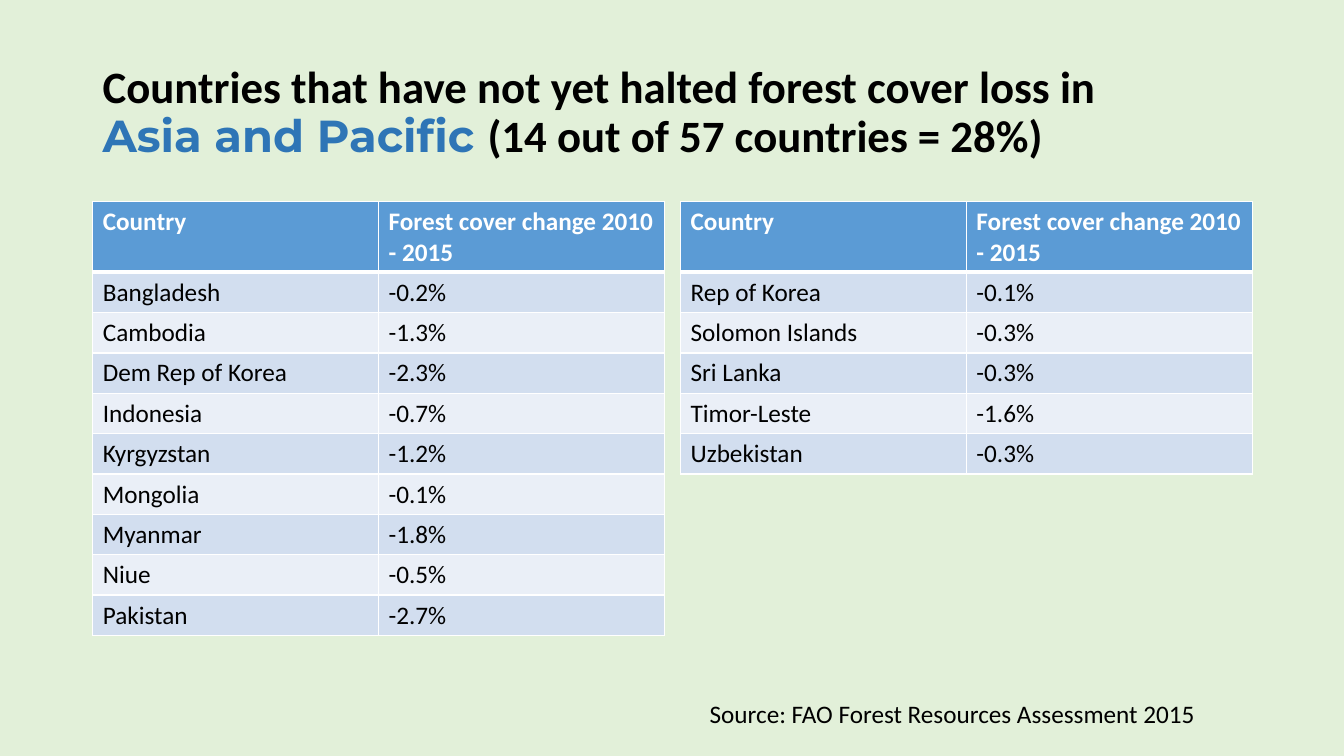
from lxml import etree
from pptx import Presentation
from pptx.dml.color import RGBColor
from pptx.enum.text import MSO_ANCHOR
from pptx.oxml.ns import qn
from pptx.util import Inches, Pt

MIDDLE = MSO_ANCHOR.MIDDLE

BACKGROUND = RGBColor(0xE2, 0xF0, 0xD9)
BLACK = RGBColor(0, 0, 0)
WHITE = RGBColor(0xFF, 0xFF, 0xFF)
REGION_BLUE = RGBColor(0x2E, 0x75, 0xB6)
HEADER_BLUE = RGBColor(0x5B, 0x9B, 0xD5)
BANDS = (RGBColor(0xD2, 0xDE, 0xEF), RGBColor(0xEA, 0xEF, 0xF7))

BODY_FONT = "Calibri"
REGION_FONT = "Montserrat"

MARGIN = 0.92
TABLE_TOP = 2
TABLE_WIDTH = 5.67
TABLE_GAP = 0.16
HEADER_HEIGHT = 0.7
ROW_HEIGHT = 0.4

HEADER = ("Country", "Forest cover change 2010 - 2015")
LEFT_COUNTRIES = [
    ("Bangladesh", "-0.2%"),
    ("Cambodia", "-1.3%"),
    ("Dem Rep of Korea", "-2.3%"),
    ("Indonesia", "-0.7%"),
    ("Kyrgyzstan", "-1.2%"),
    ("Mongolia", "-0.1%"),
    ("Myanmar", "-1.8%"),
    ("Niue", "-0.5%"),
    ("Pakistan", "-2.7%"),
]
RIGHT_COUNTRIES = [
    ("Rep of Korea", "-0.1%"),
    ("Solomon Islands", "-0.3%"),
    ("Sri Lanka", "-0.3%"),
    ("Timor-Leste", "-1.6%"),
    ("Uzbekistan", "-0.3%"),
]


def format_run(r, size, color, bold=False, font=BODY_FONT):
    r.font.size = Pt(size)
    r.font.name = font
    r.font.bold = bold
    r.font.color.rgb = color


def add_text_frame(slide, x, y, w, h):
    box = slide.shapes.add_textbox(Inches(x), Inches(y), Inches(w), Inches(h))
    tf = box.text_frame
    tf.word_wrap = True
    return tf


def add_title(slide, x, y, w, h):
    tf = add_text_frame(slide, x, y, w, h)
    tf.vertical_anchor = MIDDLE
    p = tf.paragraphs[0]
    p.line_spacing = 0.9
    r = p.add_run()
    r.text = "Countries that have not yet halted forest cover loss in"
    format_run(r, 32, BLACK, True)
    p.add_line_break()
    r = p.add_run()
    r.text = "Asia and Pacific "
    format_run(r, 32, REGION_BLUE, True, REGION_FONT)
    r = p.add_run()
    r.text = "(14 out of 57 countries = 28%)"
    format_run(r, 32, BLACK, True)


def add_borders(cell, top, bottom):
    """Draw white cell borders; top and bottom are widths in points."""
    tc_pr = cell._tc.get_or_add_tcPr()
    for side, width in (("L", 1), ("R", 1), ("T", top), ("B", bottom)):
        ln = etree.SubElement(tc_pr, qn(f"a:ln{side}"), w=str(Pt(width)))
        fill = etree.SubElement(ln, qn("a:solidFill"))
        etree.SubElement(fill, qn("a:srgbClr"), val=str(WHITE))


def add_country_table(slide, x, y, w, countries):
    rows = [HEADER] + countries
    h = HEADER_HEIGHT + ROW_HEIGHT * len(countries)
    table = slide.shapes.add_table(len(rows), len(HEADER), Inches(x), Inches(y),
                                   Inches(w), Inches(h)).table
    for i, values in enumerate(rows):
        is_header = i == 0
        table.rows[i].height = Inches(HEADER_HEIGHT if is_header else ROW_HEIGHT)
        for j, value in enumerate(values):
            cell = table.cell(i, j)
            cell.text_frame.text = value
            format_run(cell.text_frame.paragraphs[0].runs[0], 18,
                       WHITE if is_header else BLACK, is_header)
            add_borders(cell, 3 if i == 1 else 1, 3 if is_header else 1)
            cell.fill.solid()
            cell.fill.fore_color.rgb = HEADER_BLUE if is_header else BANDS[(i - 1) % 2]


def add_source(slide, x, y, w, h):
    tf = add_text_frame(slide, x, y, w, h)
    tf.text = "Source: FAO Forest Resources Assessment 2015"
    format_run(tf.paragraphs[0].runs[0], 18, BLACK)


def main():
    prs = Presentation()
    prs.slide_width = Inches(13.33)
    prs.slide_height = Inches(7.5)
    slide = prs.slides.add_slide(prs.slide_layouts[6])
    slide.background.fill.solid()
    slide.background.fill.fore_color.rgb = BACKGROUND

    add_title(slide, MARGIN, 0.4, 2 * TABLE_WIDTH + TABLE_GAP, 1.45)
    for i, countries in enumerate((LEFT_COUNTRIES, RIGHT_COUNTRIES)):
        x = MARGIN + i * (TABLE_WIDTH + TABLE_GAP)
        add_country_table(slide, x, TABLE_TOP, TABLE_WIDTH, countries)
    add_source(slide, 6.94, 6.88, 5.48, 0.4)
    prs.save("out.pptx")


if __name__ == "__main__":
    main()
